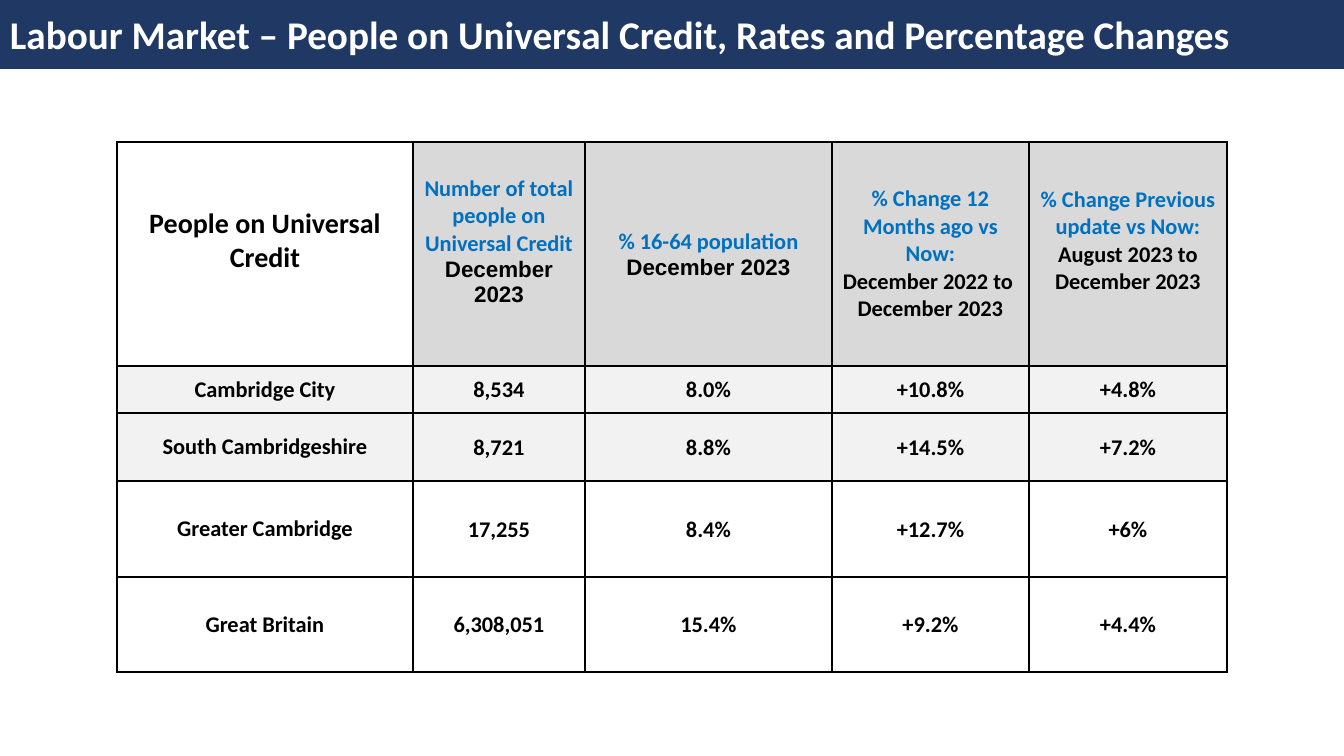
from lxml import etree
from pptx import Presentation
from pptx.dml.color import RGBColor
from pptx.enum.shapes import MSO_SHAPE
from pptx.enum.text import MSO_ANCHOR, PP_ALIGN
from pptx.oxml.ns import qn
from pptx.util import Pt

NAVY = RGBColor(0x20, 0x38, 0x64)
BLUE = RGBColor(0x00, 0x70, 0xC0)
BLACK = RGBColor(0x00, 0x00, 0x00)
WHITE = RGBColor(0xFF, 0xFF, 0xFF)
HEADER_GREY = RGBColor(0xD9, 0xD9, 0xD9)
CITY_GREY = RGBColor(0xF2, 0xF2, 0xF2)

TITLE = "Labour Market – People on Universal Credit, Rates and Percentage Changes"

# Each header: fill, bottom inset in px, paragraphs of (text, size, font, colour) runs
HEADERS = [
    (WHITE, 31, [[("People on Universal Credit", 20, "Calibri", BLACK)]]),
    (HEADER_GREY, 31, [[("Number of total people on Universal Credit ", 16, "Calibri", BLUE),
                        ("December 2023", 16, "Arial", BLACK)]]),
    (HEADER_GREY, 5, [[("% 16-64 population", 16, "Calibri", BLUE)],
                      [("December 2023", 16, "Arial", BLACK)]]),
    (HEADER_GREY, 5, [[("% Change 12 Months ago vs Now:", 16, "Calibri", BLUE)],
                      [("December 2022 to  December 2023", 16, "Calibri", BLACK)]]),
    (HEADER_GREY, 31, [[("% Change Previous update vs Now:", 16, "Calibri", BLUE)],
                       [("August 2023 to December 2023", 16, "Calibri", BLACK)]]),
]
AREAS = [
    (CITY_GREY, ("Cambridge City", "8,534", "8.0%", "+10.8%", "+4.8%")),
    (CITY_GREY, ("South Cambridgeshire", "8,721", "8.8%", "+14.5%", "+7.2%")),
    (WHITE, ("Greater Cambridge", "17,255", "8.4%", "+12.7%", "+6%")),
    (WHITE, ("Great Britain", "6,308,051", "15.4%", "+9.2%", "+4.4%")),
]
COLUMN_WIDTHS = [296, 172, 247, 197, 198]
ROW_HEIGHTS = [224, 47, 68, 96, 95]
SLIDE_WIDTH, SLIDE_HEIGHT = 1344, 756
TABLE_LEFT, TABLE_TOP = 117, 142


def px(length):
    return round(length * 914400 / 100.8)


def write(frame, paragraphs, align):
    for index, runs in enumerate(paragraphs):
        para = frame.paragraphs[0] if index == 0 else frame.add_paragraph()
        para.alignment = align
        for text, size, font, colour in runs:
            span = para.add_run()
            span.text = text
            span.font.size = Pt(size)
            span.font.name = font
            span.font.bold = True
            span.font.color.rgb = colour


def add_borders(cell):
    """Put a 1 pt black line on all four sides, ahead of the cell's fill."""
    properties = cell._tc.get_or_add_tcPr()
    for position, side in enumerate(("a:lnL", "a:lnR", "a:lnT", "a:lnB")):
        line = etree.Element(qn(side), w=str(Pt(1)))
        fill = etree.SubElement(line, qn("a:solidFill"))
        etree.SubElement(fill, qn("a:srgbClr"), val=str(BLACK))
        properties.insert(position, line)


def fill_cell(cell, colour, paragraphs):
    cell.fill.solid()
    cell.fill.fore_color.rgb = colour
    cell.vertical_anchor = MSO_ANCHOR.MIDDLE
    write(cell.text_frame, paragraphs, PP_ALIGN.CENTER)
    add_borders(cell)


def add_title(page):
    bar = page.shapes.add_shape(MSO_SHAPE.RECTANGLE, 0, 0, px(SLIDE_WIDTH), px(69))
    bar.shadow.inherit = False
    bar.fill.solid()
    bar.fill.fore_color.rgb = NAVY
    bar.line.fill.background()
    bar.text_frame.word_wrap = True
    bar.text_frame.vertical_anchor = MSO_ANCHOR.MIDDLE
    bar.text_frame.margin_bottom = px(7)
    write(bar.text_frame, [[(TITLE, 28, "Calibri", WHITE)]], PP_ALIGN.LEFT)


def add_credit_table(page):
    table = page.shapes.add_table(len(ROW_HEIGHTS), len(COLUMN_WIDTHS),
                                  px(TABLE_LEFT), px(TABLE_TOP),
                                  px(sum(COLUMN_WIDTHS)), px(sum(ROW_HEIGHTS))).table
    table.horz_banding = False
    for column, width in zip(table.columns, COLUMN_WIDTHS):
        column.width = px(width)
    for row, height in zip(table.rows, ROW_HEIGHTS):
        row.height = px(height)

    for column, (colour, bottom, paragraphs) in enumerate(HEADERS):
        cell = table.cell(0, column)
        cell.margin_bottom = px(bottom)
        fill_cell(cell, colour, paragraphs)

    for row, (colour, texts) in enumerate(AREAS, start=1):
        for column, text in enumerate(texts):
            cell = table.cell(row, column)
            if column > 0:
                cell.margin_left = cell.margin_right = cell.margin_top = px(1)
                cell.margin_bottom = 0
            fill_cell(cell, colour, [[(text, 16, "Calibri", BLACK)]])


def main():
    deck = Presentation()
    deck.slide_width, deck.slide_height = px(SLIDE_WIDTH), px(SLIDE_HEIGHT)
    page = deck.slides.add_slide(deck.slide_layouts[6])
    add_title(page)
    add_credit_table(page)
    deck.save("out.pptx")


if __name__ == "__main__":
    main()
